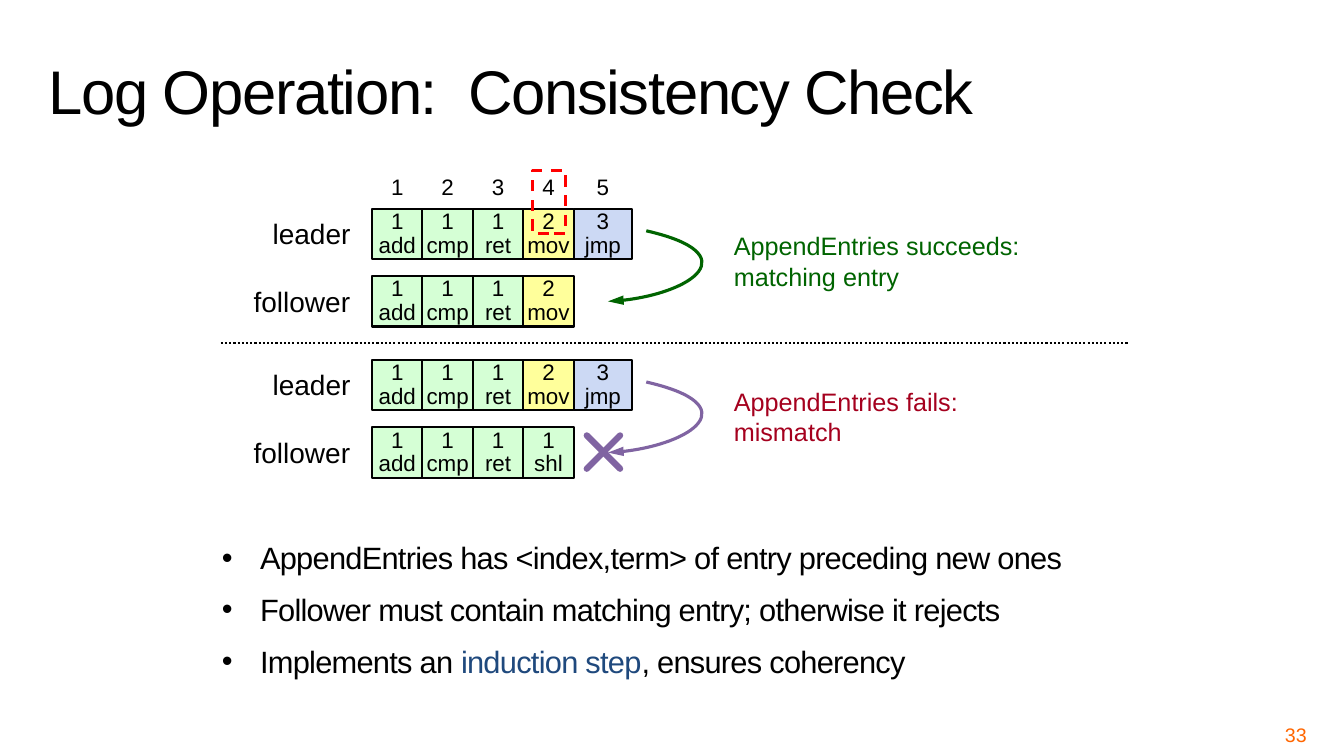
from lxml.etree import SubElement
from pptx import Presentation
from pptx.dml.color import RGBColor
from pptx.enum.dml import MSO_LINE_DASH_STYLE as Dash
from pptx.enum.shapes import MSO_CONNECTOR as Connector, MSO_SHAPE as Shape
from pptx.enum.text import MSO_ANCHOR as Anchor, MSO_AUTO_SIZE as Fit, PP_ALIGN as Align
from pptx.oxml.ns import qn
from pptx.util import Inches, Pt

COLORS = {
    "black": "000000", "green": "D5FFD5", "yellow": "FFFF9B", "blue": "CCD9F4",
    "success": "006400", "failure": "A5001E", "purple": "8064A2",
    "accent": "1F497D", "number": "FF6600", "red": "FF0000",
}
TITLE = "Log Operation:  Consistency Check"
PAGE_NUMBER = "33"
START = [("1", "add", "green"), ("1", "cmp", "green"), ("1", "ret", "green")]
LEADER = START + [("2", "mov", "yellow"), ("3", "jmp", "blue")]
LOGS = [
    ("leader", 2.07, LEADER),
    ("follower", 2.74, LEADER[:4]),
    ("leader", 3.57, LEADER),
    ("follower", 4.24, START + [("1", "shl", "green")]),
]
LABELS = {"leader": (2.7, 0.78), "follower": (2.51, 0.97)}
OUTCOMES = [
    (["AppendEntries succeeds:", "matching entry"], "success", "success", 2.24, 3.06, 2.29),
    (["AppendEntries fails:", "mismatch"], "failure", "purple", 3.78, 2.45, 3.79),
]
BULLETS = [
    [("AppendEntries has <index,term> of entry preceding new ones", "black")],
    [("Follower must contain matching entry; otherwise it rejects", "black")],
    [("Implements an ", "black"), ("induction step", "accent"),
     (", ensures coherency", "black")],
]
CELL_LEFT, CELL, LAST_CELL = 3.69, 0.5, 0.58

deck = Presentation()
deck.slide_width, deck.slide_height = Inches(13.33), Inches(7.5)
page = deck.slides.add_slide(deck.slide_layouts[6])


def color(name):
    return RGBColor.from_string(COLORS[name])


def place(*lengths):
    return [Inches(length) for length in lengths]


def set_frame(frame, inset=None, anchor=Anchor.TOP, wrap=True):
    frame.word_wrap = wrap
    frame.vertical_anchor = anchor
    if inset is not None:
        frame.margin_left = frame.margin_right = Inches(inset)
        frame.margin_top = frame.margin_bottom = Inches(inset)


def set_font(font, size, name):
    font.name, font.size = "Arial", Pt(size)
    font.color.rgb = color(name)


def write(frame, lines, size, name="black", align=Align.LEFT, spacing=None):
    for number, line in enumerate(lines):
        para = frame.add_paragraph() if number else frame.paragraphs[0]
        para.text, para.alignment, para.line_spacing = line, align, spacing
        set_font(para.font, size, name)


def add_text(at, lines, size, name="black", align=Align.LEFT, spacing=None, **layout):
    frame = page.shapes.add_textbox(*place(*at)).text_frame
    set_frame(frame, **layout)
    write(frame, lines, size, name, align, spacing)
    return frame


def set_tracking(span, points):
    span._r.get_or_add_rPr().set("spc", str(int(points * 100)))


def set_line(line, name, width):
    line.color.rgb, line.width = color(name), Pt(width)


def add_rectangle(at, line_name, width):
    box = page.shapes.add_shape(Shape.RECTANGLE, *place(*at))
    box.shadow.inherit = False
    set_line(box.line, line_name, width)
    return box


def add_line(ends, name, width):
    link = page.shapes.add_connector(Connector.STRAIGHT, *place(*ends))
    set_line(link.line, name, width)
    SubElement(link._element.spPr, qn("a:effectLst"))
    return link


def cell_span(index):
    return CELL_LEFT + index * CELL, LAST_CELL if index == 4 else CELL


def add_entry(index, top, term, command, fill):
    left, width = cell_span(index)
    box = add_rectangle((left, top, width, CELL), "black", 1.5)
    box.fill.solid()
    box.fill.fore_color.rgb = color(fill)
    set_frame(box.text_frame, 0, Anchor.MIDDLE)
    write(box.text_frame, [f"{term}\n{command}"], 16, align=Align.CENTER, spacing=Pt(17))


def add_curve(top, name):
    left, right, bottom = 6.03, 6.94, top + 0.7
    builder = page.shapes.build_freeform(*place(6.41, top))
    builder.add_line_segments([place(right, top + 0.4), place(left, bottom)], close=False)
    curve = builder.convert_to_shape()
    curve.shadow.inherit = False
    curve.fill.background()
    set_line(curve.line, name, 2.25)
    outline = next(curve._element.iter(qn("a:path")))
    for segment in outline.findall(qn("a:lnTo")):
        outline.remove(segment)
    bend = SubElement(outline, qn("a:cubicBezTo"))
    for x, y in [(7.42, top + 0.23), (6.79, top + 0.67), (left, bottom)]:
        SubElement(bend, qn("a:pt"), x=str(Inches(x - left)), y=str(Inches(y - top)))
    SubElement(curve.line._get_or_add_ln(), qn("a:tailEnd"), type="triangle", w="med", len="lg")


title = add_text((0.38, 0.13, 12.62, 1.17), [TITLE], 44, spacing=0.8, anchor=Anchor.BOTTOM)
set_tracking(title.paragraphs[0].runs[0], -1)
add_text((9.89, 7.17, 3.11, 0.23), [PAGE_NUMBER], 14, "number", Align.RIGHT,
         inset=0.04, anchor=Anchor.MIDDLE)

body = page.shapes.add_textbox(*place(2.16, 5.38, 9.26, 1.6)).text_frame
set_frame(body, 0.04)
for number, spans in enumerate(BULLETS):
    para = body.add_paragraph() if number else body.paragraphs[0]
    para.line_spacing = 0.8
    para.space_before = Pt(16 if number else 4.4)
    settings = para._p.get_or_add_pPr()
    settings.set("marL", str(Inches(0.38)))
    settings.set("indent", str(Inches(-0.38)))
    SubElement(settings, qn("a:buFont"), typeface="Arial")
    SubElement(settings, qn("a:buChar"), char="•")
    for words, name in spans:
        span = para.add_run()
        span.text = words
        set_font(span.font, 22, name)
        set_tracking(span, -0.5)

for label, top, entries in LOGS:
    for index, entry in enumerate(entries):
        add_entry(index, top, *entry)
    left, width = LABELS[label]
    add_text((left, top + 0.08, width, 0.34), [label], 20, align=Align.CENTER,
             inset=0, wrap=False).auto_size = Fit.SHAPE_TO_FIT_TEXT

for index in range(len(LEADER)):
    left, width = cell_span(index)
    add_text((left, 1.67, width, 0.37), [str(index + 1)], 16, align=Align.CENTER)

add_line((2.19, 3.4, 11.19, 3.4), "black", 1.5).line.dash_style = Dash.ROUND_DOT

for lines, text_color, curve_color, text_top, width, curve_top in OUTCOMES:
    add_curve(curve_top, curve_color)
    add_text((7.18, text_top, width, 0.71), lines, 18, text_color)

for start, end in [(4.32, 4.65), (4.65, 4.32)]:
    stroke = add_line((5.82, start, 6.15, end), "purple", 4.5)
    stroke.line._get_or_add_ln().set("cap", "rnd")

marker = add_rectangle((5.28, 1.69, 0.33, 0.63), "red", 2)
marker.fill.background()
marker.line.dash_style = Dash.DASH

deck.save("out.pptx")
